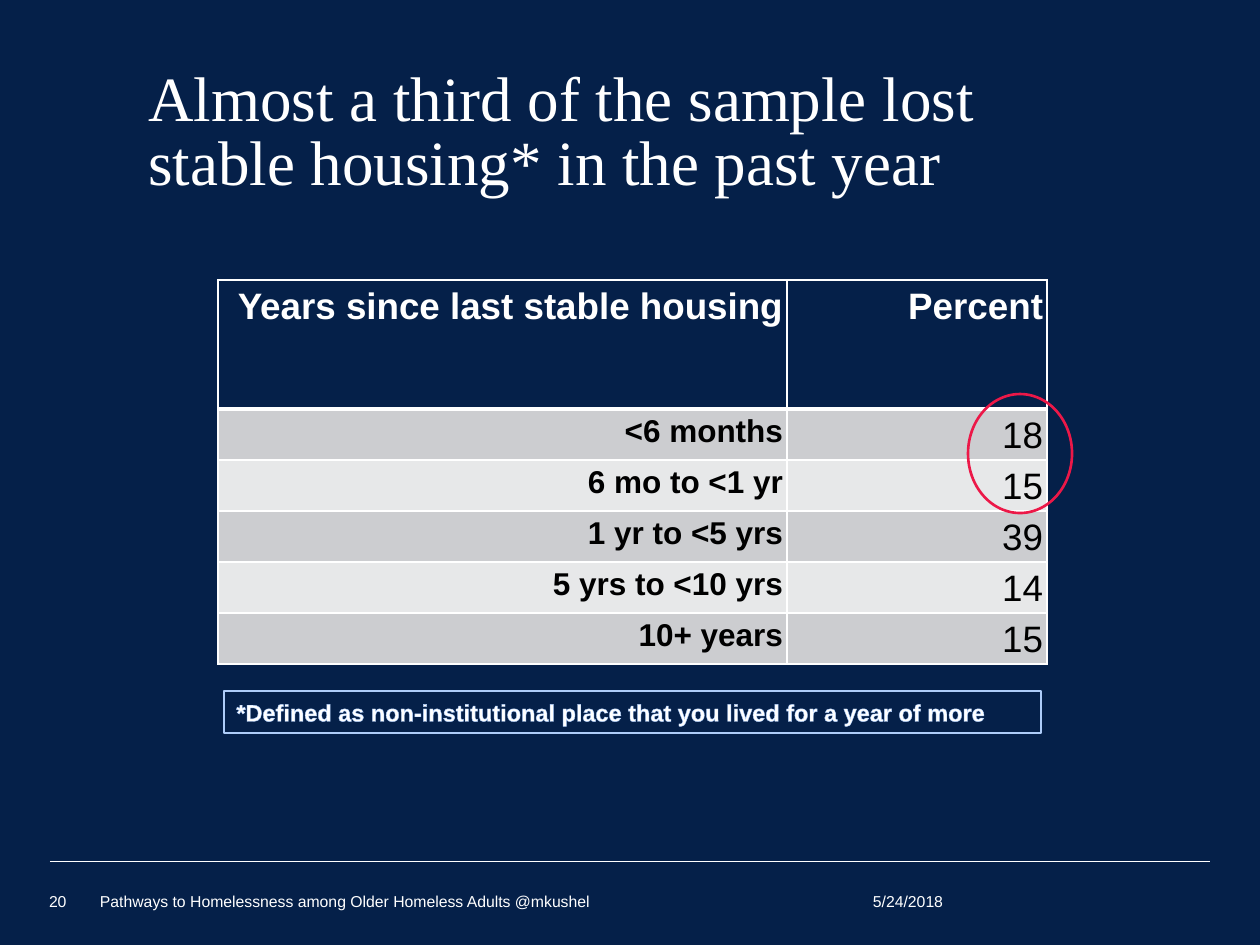
from lxml import etree
from pptx import Presentation
from pptx import util as u
from pptx.dml.color import RGBColor
from pptx.enum import shapes, text
from pptx.oxml.ns import qn

SCALE = 914400 / 126  # EMU in one px
NAVY = RGBColor(0x05, 0x20, 0x49)
WHITE = RGBColor(0xFF, 0xFF, 0xFF)
BLACK = RGBColor(0x00, 0x00, 0x00)
DARK_BAND = RGBColor(0xCC, 0xCD, 0xD0)
LIGHT_BAND = RGBColor(0xE7, 0xE8, 0xE9)
PALE_BLUE = RGBColor(0xAE, 0xCC, 0xF9)
RED = RGBColor(0xEC, 0x18, 0x48)


def px(*lengths):
    return [u.Emu(round(length * SCALE)) for length in lengths]


def write(frame, words, size, color, font="Arial", bold=False):
    frame.text = words
    para = frame.paragraphs[0]
    span = para.runs[0]
    span.font.name = font
    span.font.size = u.Pt(size)
    span.font.bold = bold
    span.font.color.rgb = color
    return para


deck = Presentation()
deck.slide_width, deck.slide_height = px(1260, 945)
page = deck.slides.add_slide(deck.slide_layouts[6])
page.background.fill.solid()
page.background.fill.fore_color.rgb = NAVY

# Footer rule
rule = page.shapes.add_connector(shapes.MSO_CONNECTOR.STRAIGHT, *px(50, 861, 1210, 861))
rule.line.color.rgb = WHITE
rule.line.width = u.Pt(0.25)
etree.SubElement(rule._element.spPr, qn("a:effectLst"))

# Table of years since stable housing
rows = [
    ("Years since last stable housing", "Percent"),
    ("<6 months", "18"),
    ("6 mo to <1 yr", "15"),
    ("1 yr to <5 yrs", "39"),
    ("5 yrs to <10 yrs", "14"),
    ("10+ years", "15"),
]
table = page.shapes.add_table(len(rows), 2, *px(218, 280, 829, 384)).table
for column, width in zip(table.columns, px(569, 260)):
    column.width = width
for r, row in enumerate(rows):
    header = r == 0
    table.rows[r].height = px(129 if header else 51)[0]
    for c, words in enumerate(row):
        cell = table.cell(r, c)
        cell.margin_left, cell.margin_right = px(4, 4)
        cell.margin_top = cell.margin_bottom = 0
        label = c == 0 and not header
        para = write(cell.text_frame, words, 18 if label else 21,
                     WHITE if header else BLACK, bold=header or c == 0)
        para.alignment = text.PP_ALIGN.RIGHT
        para.line_spacing = 1.15
        para.space_before = u.Pt(0)
        para.space_after = u.Pt(3)

        # Borders, thicker below the header
        for side in ("lnL", "lnR", "lnT", "lnB"):
            thick = (r, side) in ((0, "lnB"), (1, "lnT"))
            border = etree.SubElement(cell._tc.get_or_add_tcPr(), qn("a:" + side),
                                      w=str(u.Pt(3 if thick else 1)))
            paint = etree.SubElement(border, qn("a:solidFill"))
            etree.SubElement(paint, qn("a:srgbClr"), val=str(WHITE))
        cell.fill.solid()
        cell.fill.fore_color.rgb = NAVY if header else DARK_BAND if r % 2 else LIGHT_BAND

# Title
title = page.shapes.add_textbox(*px(136, 64, 994, 78)).text_frame
title.word_wrap = True
write(title, "Almost a third of the sample lost stable housing* in the past year",
      36, WHITE, "Times New Roman").line_spacing = 0.85

# Definition note, with outlined letters
note = page.shapes.add_shape(shapes.MSO_SHAPE.RECTANGLE, *px(224, 691, 817, 42))
note.shadow.inherit = False
note.fill.background()
note.line.color.rgb = PALE_BLUE
note.line.width = u.Pt(0.75)
para = write(note.text_frame,
             "*Defined as non-institutional place that you lived for a year of more",
             13.5, WHITE, bold=True)
para.alignment = text.PP_ALIGN.LEFT
outline = etree.Element(qn("a:ln"), w=str(u.Pt(0.75)))
paint = etree.SubElement(outline, qn("a:solidFill"))
etree.SubElement(paint, qn("a:srgbClr"), val=str(PALE_BLUE))
para.runs[0].font._element.insert(0, outline)

# Ring around the first two percentages
ring = page.shapes.add_shape(shapes.MSO_SHAPE.OVAL, *px(968, 394, 104, 119))
ring.shadow.inherit = False
ring.fill.background()
ring.line.color.rgb = RED
ring.line.width = u.Pt(1.5)

# Footer: date, talk name, page number
for words, left, top, width, height in (
    ("5/24/2018", 873, 889, 127, 22),
    ("Pathways to Homelessness among Older Homeless Adults @mkushel", 100, 892, 594, 19),
    ("20", 49, 889, 34, 22),
):
    frame = page.shapes.add_textbox(*px(left, top, width, height)).text_frame
    frame.word_wrap = True
    frame.margin_left = frame.margin_top = frame.margin_right = frame.margin_bottom = 0
    frame.vertical_anchor = text.MSO_ANCHOR.BOTTOM
    write(frame, words, 9, WHITE)

deck.save("out.pptx")
